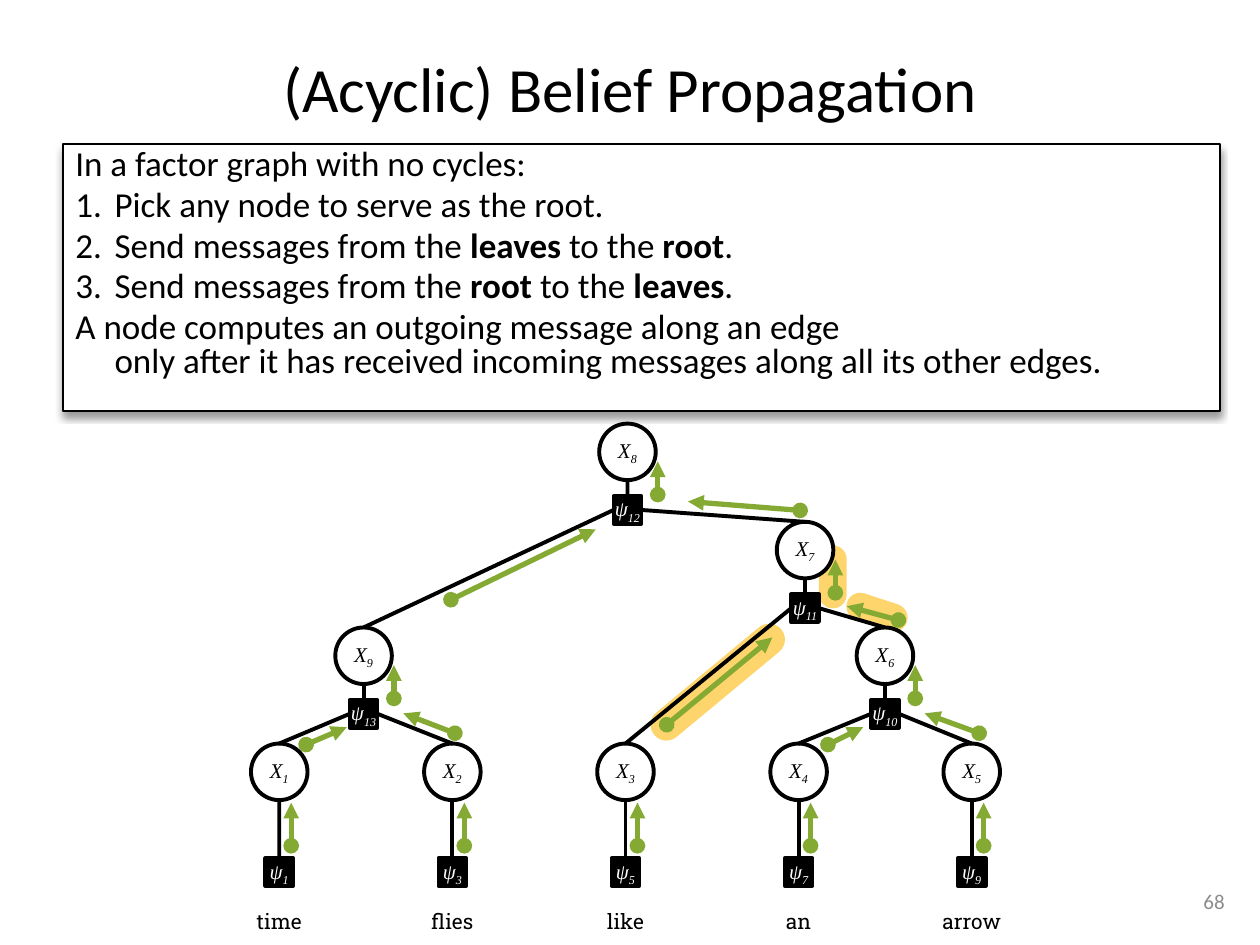
from lxml.etree import SubElement
from pptx import Presentation
from pptx.dml.color import RGBColor
from pptx.enum.shapes import MSO_CONNECTOR as Connector, MSO_SHAPE as Shape
from pptx.enum.text import MSO_ANCHOR as Anchor, PP_ALIGN as Align
from pptx.oxml.ns import qn
from pptx.util import Cm, Pt

COLORS = {
    "black": "000000",
    "white": "FFFFFF",
    "grey": "8C8C8C",
    "message": "84AA33",
    "highlight": "FED46C",
}
NODE, FACTOR = 1.14, 0.56
FACTOR_DROP, LEAF_DROP = 1.17, 2.02
LEAF_START, LEAF_STEP, LEAF_Y, WORD_Y = 1.43, 3.49, 7.06, 10.07
WORDS = ["time", "flies", "like", "an", "arrow"]
INNER_NODES = {
    "8": (8.45, 0.61, "12", ("9", "7")),
    "7": (12.03, 2.59, "11", ("3", "6")),
    "9": (3.13, 4.72, "13", ("1", "2")),
    "6": (13.64, 4.72, "10", ("4", "5")),
}
SLANTED_MESSAGES = [
    (1.97, 6.51, 2.79, 6.16),
    (4.97, 6.28, 3.93, 5.88),
    (9.24, 6.11, 11.37, 4.35),
    (12.49, 6.51, 13.2, 6.16),
    (15.54, 6.28, 14.44, 5.88),
    (4.89, 3.59, 7.81, 2.17),
    (13.91, 4, 12.87, 3.72),
    (11.93, 1.79, 9.67, 1.61),
]
HIGHLIGHTS = [
    (10.27, 5.25, 0.64, 3.33, 230.3),
    (12.59, 3.13, 0.56, 1.27, 0),
    (13.48, 3.84, 0.56, 1.27, 288.2),
]
STEPS = [
    [("Pick any node to serve as the root.", False)],
    [("Send messages from the ", False), ("leaves", True), (" to the ", False),
     ("root", True), (".", False)],
    [("Send messages from the ", False), ("root", True), (" to the ", False),
     ("leaves", True), (".", False)],
]


def rgb(name):
    """Return the named colour."""
    return RGBColor.from_string(COLORS[name])


def add_run(paragraph, text, size, font="Calibri", color="black"):
    """Append a formatted run and return it."""
    run = paragraph.add_run()
    run.text = text
    run.font.size = Pt(size)
    run.font.name = font
    run.font.color.rgb = rgb(color)
    return run


def add_label(slide, box, text, size, align=Align.CENTER, **style):
    """Place one line of text, centred vertically in the box."""
    frame = slide.shapes.add_textbox(*map(Cm, box)).text_frame
    frame.word_wrap = True
    frame.vertical_anchor = Anchor.MIDDLE
    frame.paragraphs[0].alignment = align
    add_run(frame.paragraphs[0], text, size, **style)


def add_centered(slide, kind, x, y, width, height, fill):
    """Place a filled shape around a centre point."""
    box = (x - width / 2, y - height / 2, width, height)
    shape = slide.shapes.add_shape(kind, *map(Cm, box))
    shape.shadow.inherit = False
    shape.fill.solid()
    shape.fill.fore_color.rgb = rgb(fill)
    shape.line.fill.background()
    return shape


def add_node(slide, kind, x, y, size, symbol, index, fill, ink):
    """Place a variable or factor with its subscripted symbol."""
    shape = add_centered(slide, kind, x, y, size, size, fill)
    shape.line.color.rgb = rgb("black")
    shape.line.width = Pt(2.25)
    frame = shape.text_frame
    frame.word_wrap = False
    frame.margin_left = frame.margin_right = frame.margin_top = frame.margin_bottom = 0
    frame.vertical_anchor = Anchor.MIDDLE if symbol == "X" else Anchor.TOP
    paragraph = frame.paragraphs[0]
    paragraph.alignment = Align.CENTER
    for text in (symbol, index):
        run = add_run(paragraph, text, 12, "Times New Roman", ink)
        run.font.italic = True
    run.font._element.set("baseline", "-25000")
    return shape


def add_variable(slide, x, y, index):
    """Place a round variable node."""
    return add_node(slide, Shape.OVAL, x, y, NODE, "X", index, "white", "black")


def add_factor(slide, x, y, index):
    """Place a square factor node."""
    return add_node(slide, Shape.RECTANGLE, x, y, FACTOR, "ψ", index, "black", "white")


def add_line(slide, x1, y1, x2, y2, color="black", width=2.25):
    """Draw a straight line without a shadow."""
    line = slide.shapes.add_connector(Connector.STRAIGHT, *map(Cm, (x1, y1, x2, y2)))
    line.line.color.rgb = rgb(color)
    line.line.width = Pt(width)
    SubElement(line._element.spPr, qn("a:effectLst"))
    return line


def add_message(slide, x1, y1, x2, y2):
    """Draw a message arrow that starts with a dot."""
    arrow = add_line(slide, x1, y1, x2, y2, "message", 3)
    outline = arrow.line._get_or_add_ln()
    SubElement(outline, qn("a:headEnd"), type="oval")
    SubElement(outline, qn("a:tailEnd"), type="triangle")


def add_stem(slide, x, y, drop, index):
    """Hang a factor below the variable centred at x, y."""
    factor = add_factor(slide, x, y + drop, index)
    stem = add_line(slide, x, y + NODE / 2, x, y + drop - FACTOR / 2)
    stem.end_connect(factor, 0)
    return factor


def build_steps(slide, box):
    """Build the framed description of the algorithm."""
    frame_shape = slide.shapes.add_shape(Shape.RECTANGLE, *map(Cm, box))
    frame_shape.fill.solid()
    frame_shape.fill.fore_color.rgb = rgb("white")
    frame_shape.line.color.rgb = rgb("black")
    frame_shape.line.width = Pt(1)
    effects = SubElement(frame_shape._element.spPr, qn("a:effectLst"))
    shadow = SubElement(effects, qn("a:outerShdw"), blurRad=str(Pt(4)),
                        dist=str(Pt(3)), dir="5400000", rotWithShape="0")
    shade = SubElement(shadow, qn("a:srgbClr"), val=COLORS["black"])
    SubElement(shade, qn("a:alpha"), val="40000")

    frame = frame_shape.text_frame
    frame.word_wrap = True
    frame.vertical_anchor = Anchor.TOP
    intro = [("In a factor graph with no cycles:", False)]
    rule = [("A node computes an outgoing message along an edge \v"
             "only after it has received incoming messages along all its other edges.", False)]
    for number, runs in enumerate([intro, *STEPS, rule]):
        paragraph = frame.add_paragraph() if number else frame.paragraphs[0]
        paragraph.alignment = Align.LEFT
        paragraph.line_spacing = 0.8
        paragraph.space_before = Pt(4)
        properties = paragraph._p.get_or_add_pPr()
        properties.set("marL", str(Cm(0.79)))
        properties.set("indent", str(Cm(-0.79)))
        if runs in STEPS:
            SubElement(properties, qn("a:buFont"), typeface="+mj-lt")
            SubElement(properties, qn("a:buAutoNum"), type="arabicPeriod")
        for text, bold in runs:
            for part, line in enumerate(text.split("\v")):
                if part:
                    paragraph.add_line_break()
                add_run(paragraph, line, 20).font.bold = bold


def build_tree(slide, box):
    """Build the factor graph with its messages, words and highlights."""
    left, top = box[:2]
    for x, y, width, height, angle in HIGHLIGHTS:
        band = add_centered(slide, Shape.ROUNDED_RECTANGLE, left + x, top + y,
                            width, height, "highlight")
        band.adjustments[0] = 0.5
        band.rotation = angle

    variables, factors = {}, {}
    for number, word in enumerate(WORDS):
        x, y = left + LEAF_START + number * LEAF_STEP, top + LEAF_Y
        index = str(number + 1)
        variables[index] = add_variable(slide, x, y, index)
        add_stem(slide, x, y, LEAF_DROP, str(2 * number + 1))
        add_message(slide, x + 0.24, y + 1.49, x + 0.24, y + 0.62)
        add_label(slide, (x - 1.5, top + WORD_Y - 0.38, 3, 0.76), word, 12, font="Roboto Slab")
    for index, (x, y, factor_index, children) in INNER_NODES.items():
        x, y = left + x, top + y
        variables[index] = add_variable(slide, x, y, index)
        factors[index] = add_stem(slide, x, y, FACTOR_DROP, factor_index)
        add_message(slide, x + 0.61, y + 0.86, x + 0.61, y + 0.19)
    for index, factor in factors.items():
        for side, child in zip((1, 3), INNER_NODES[index][3]):
            edge = add_line(slide, 0, 0, 1, 1)
            edge.begin_connect(factor, side)
            edge.end_connect(variables[child], 0)
    for x1, y1, x2, y2 in SLANTED_MESSAGES:
        add_message(slide, left + x1, top + y1, left + x2, top + y2)


def main():
    """Build and save the presentation."""
    presentation = Presentation()
    presentation.slide_width, presentation.slide_height = Cm(25.4), Cm(19.05)
    slide = presentation.slides.add_slide(presentation.slide_layouts[6])
    add_label(slide, (1.27, 0.76, 22.86, 2), "(Acyclic) Belief Propagation", 36)
    add_label(slide, (22.53, 17.65, 2.41, 1.02), "68", 12, Align.RIGHT, color="grey")
    build_steps(slide, (1.27, 2.9, 23.32, 5.38))
    build_tree(slide, (4.2, 8.5, 17, 10.5))
    presentation.save("out.pptx")


if __name__ == "__main__":
    main()
